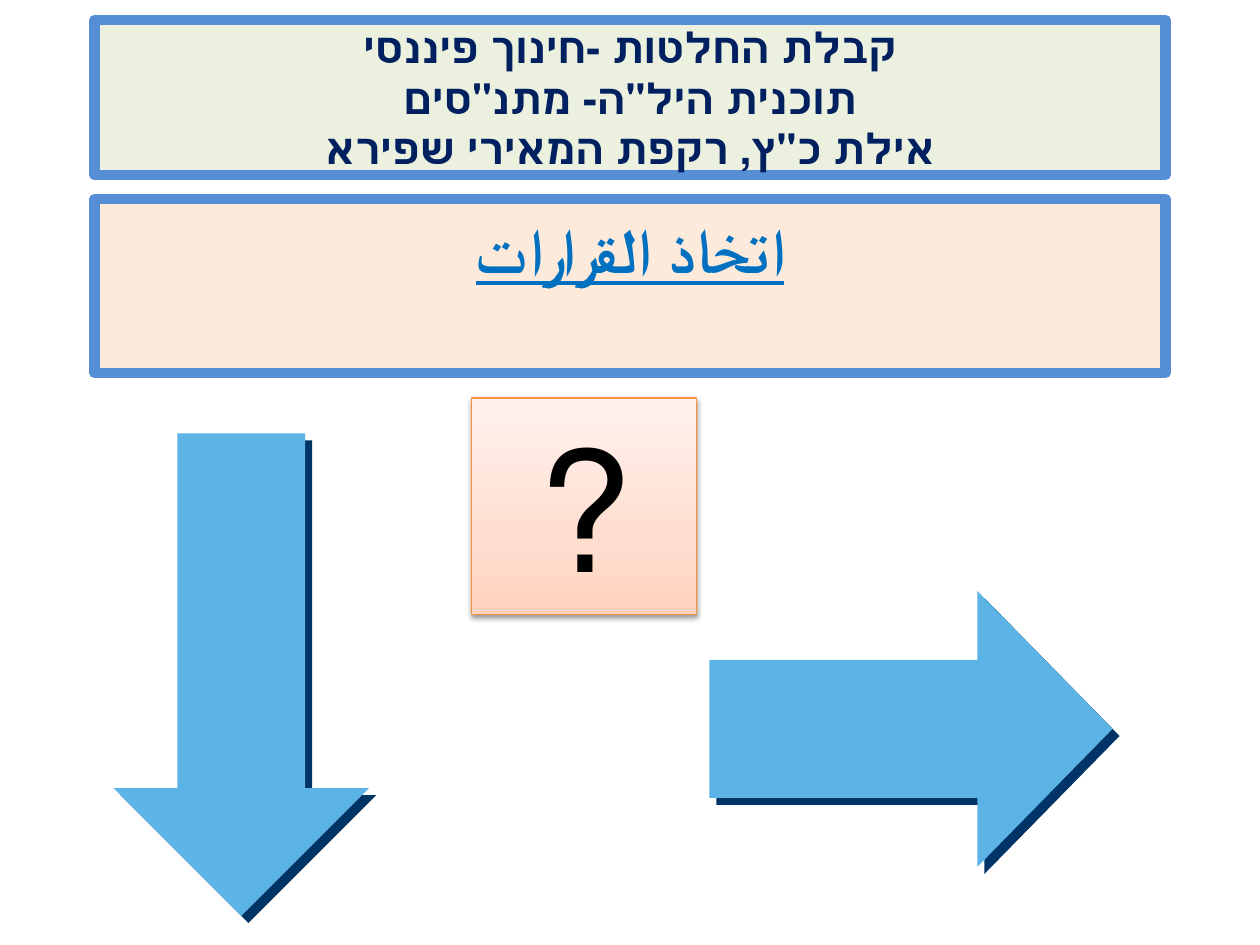
from lxml import etree
from pptx import Presentation
from pptx.dml.color import RGBColor
from pptx.enum.shapes import MSO_SHAPE
from pptx.enum.text import MSO_ANCHOR, PP_ALIGN
from pptx.oxml.ns import qn
from pptx.util import Inches, Pt

RECTANGLE = MSO_SHAPE.RECTANGLE
RIGHT_ARROW, DOWN_ARROW = MSO_SHAPE.RIGHT_ARROW, MSO_SHAPE.DOWN_ARROW
TOP, MIDDLE = MSO_ANCHOR.TOP, MSO_ANCHOR.MIDDLE
CENTER = PP_ALIGN.CENTER

PEACH = RGBColor(0xFD, 0xEA, 0xDA)
PALE_GREEN = RGBColor(0xEB, 0xF1, 0xDE)
FRAME_BLUE = RGBColor(0x55, 0x8E, 0xD5)
TITLE_BLUE = RGBColor(0x00, 0x70, 0xC0)
NAVY = RGBColor(0x00, 0x20, 0x60)
SKY = RGBColor(0x5B, 0xB3, 0xE6)
ARROW_SHADE = RGBColor(0x00, 0x33, 0x66)
ORANGE = RGBColor(0xF6, 0x92, 0x40)
BLACK = RGBColor(0, 0, 0)
CARD_STOPS = [(0, RGBColor(0xFF, 0xD2, 0xBD)),
              (35, RGBColor(0xFF, 0xDE, 0xD0)),
              (100, RGBColor(0xFF, 0xF2, 0xED))]
BANNER_LEFT, BANNER_WIDTH = 0.75, 8.5


def add_part(slide, preset, box):
    part = slide.shapes.add_shape(preset, *(Inches(length) for length in box))
    part.shadow.inherit = False
    return part


def add_shadow(part, color, opacity, blur, distance, angle):
    effects = part._element.spPr.find(qn("a:effectLst"))
    shadow = etree.SubElement(
        effects, qn("a:outerShdw"), blurRad=str(Pt(blur)),
        dist=str(Pt(distance)), dir=str(angle * 60000), rotWithShape="0")
    shade = etree.SubElement(shadow, qn("a:srgbClr"), val=str(color))
    etree.SubElement(shade, qn("a:alpha"), val=str(opacity * 1000))


def write_rtl(part, text, size, color, font_name, bold=False, underline=False):
    """Centred right-to-left text."""
    frame = part.text_frame
    frame.word_wrap = True
    frame.text = text
    paragraph = frame.paragraphs[0]
    paragraph.alignment = CENTER
    paragraph._p.get_or_add_pPr().set("rtl", "1")
    for run in paragraph.runs:
        font = run.font
        font.size, font.bold, font.underline = Pt(size), bold, underline
        font.name = font_name
        font.color.rgb = color


def add_banner(slide, top, height, fill, anchor):
    banner = add_part(slide, RECTANGLE,
                      (BANNER_LEFT, top, BANNER_WIDTH, height))
    banner.fill.solid()
    banner.fill.fore_color.rgb = fill
    banner.line.color.rgb = FRAME_BLUE
    banner.line.width = Pt(6)
    banner.text_frame.vertical_anchor = anchor
    return banner


def add_question_card(slide, box):
    card = add_part(slide, RECTANGLE, box)
    card.fill.gradient()
    card.fill.gradient_angle = 90
    gradient = card._element.spPr.find(qn("a:gradFill"))
    stops = gradient.find(qn("a:gsLst"))
    for stop in list(stops):
        stops.remove(stop)
    for position, color in CARD_STOPS:
        stop = etree.SubElement(stops, qn("a:gs"), pos=str(position * 1000))
        etree.SubElement(stop, qn("a:srgbClr"), val=str(color))
    card.line.color.rgb = ORANGE
    card.line.width = Pt(0.75)
    add_shadow(card, BLACK, 38, 3.1, 1.6, 90)
    card.text_frame.vertical_anchor = TOP
    write_rtl(card, "?", 96, BLACK, "Calibri")


def add_arrow(slide, preset, box, head):
    arrow = add_part(slide, preset, box)
    arrow.adjustments[0], arrow.adjustments[1] = 0.5, head
    arrow.fill.solid()
    arrow.fill.fore_color.rgb = SKY
    arrow.line.fill.background()
    add_shadow(arrow, ARROW_SHADE, 100, 0, 5.7, 45)


def main():
    deck = Presentation()
    deck.slide_width, deck.slide_height = Inches(10), Inches(7.5)
    slide = deck.slides.add_slide(deck.slide_layouts[6])

    # Title banner
    title = add_banner(slide, 1.58, 1.38, PEACH, TOP)
    title.text_frame.margin_top = Inches(0.09)
    write_rtl(title, "اتخاذ القرارات", 36, TITLE_BLUE, "Calibri",
              bold=True, underline=True)

    # Question and the two ways out of it
    add_question_card(slide, (3.74, 3.16, 1.79, 1.72))
    add_arrow(slide, RIGHT_ARROW, (5.63, 4.69, 3.2, 2.19), 0.49)
    add_arrow(slide, DOWN_ARROW, (0.9, 3.44, 2.03, 3.83), 0.5)

    # Programme banner
    programme = add_banner(slide, 0.16, 1.23, PALE_GREEN, MIDDLE)
    write_rtl(programme, "קבלת החלטות -חינוך פיננסי\v"
              "תוכנית היל\"ה- מתנ\"סים\v"
              "אילת כ\"ץ, רקפת המאירי שפירא", 24, NAVY, "Lato", bold=True)

    deck.save("out.pptx")


if __name__ == "__main__":
    main()
